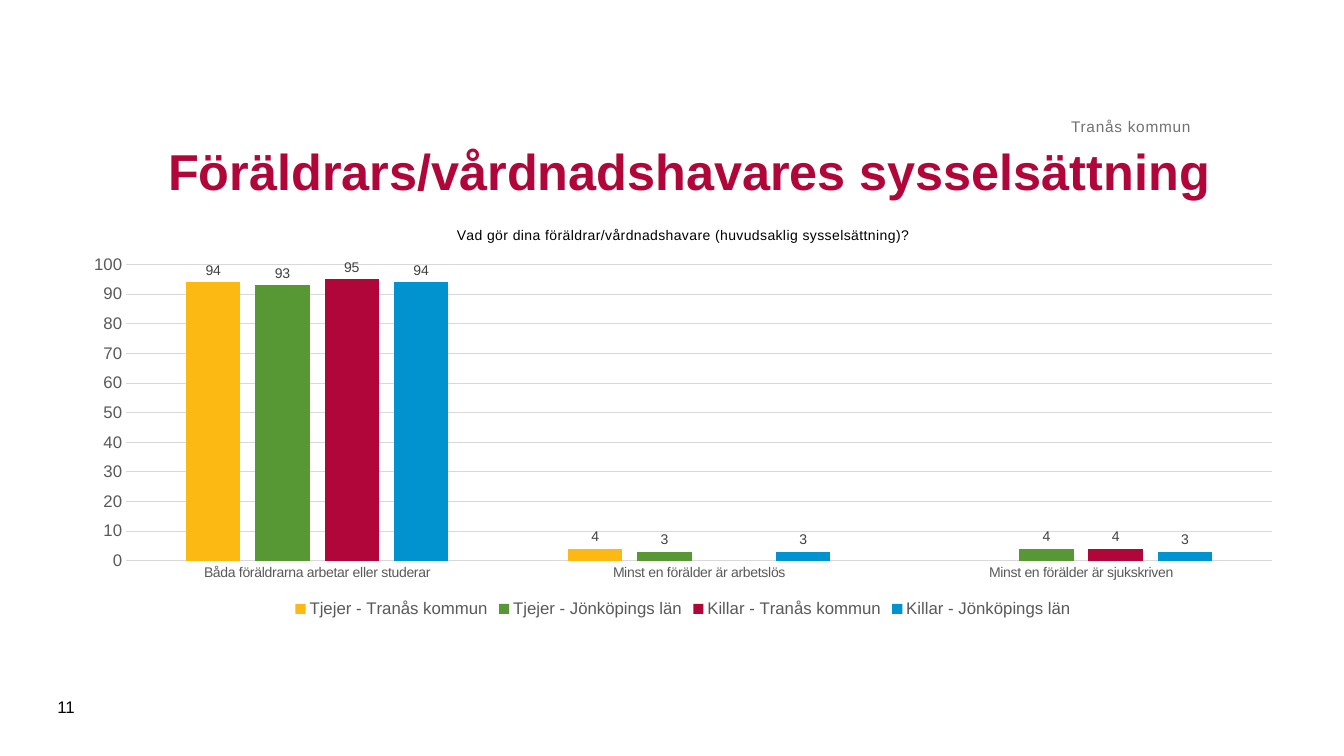
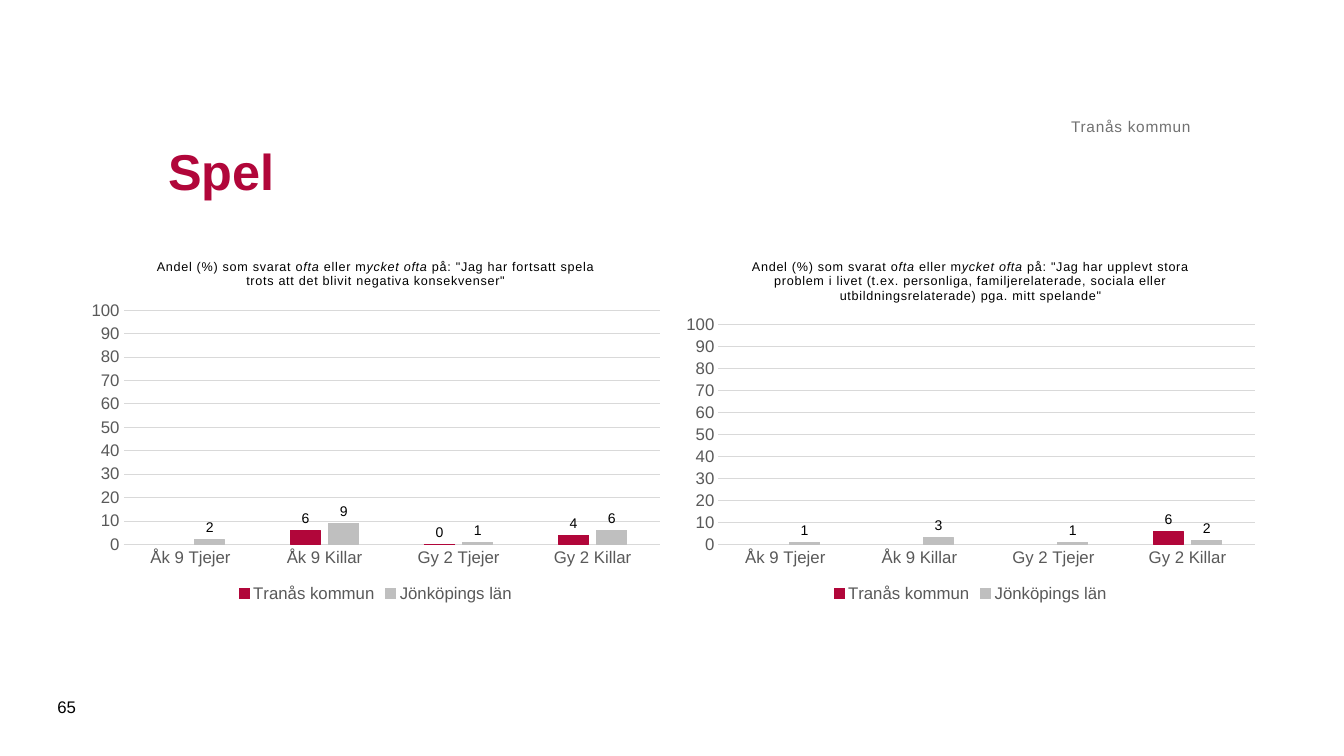
from pptx import Presentation
from pptx import util as u
from pptx.chart import data as chart_data
from pptx.dml import color
from pptx.enum import chart as charts, text

COLORS = {
    "crimson": "B1063A",
    "yellow": "FDB913",
    "green": "579835",
    "blue": "0093D0",
    "silver": "BFBFBF",
    "grid": "D9D9D9",
    "axis": "595959",
    "label": "404040",
    "muted": "717171",
    "black": "000000",
}
FONT = "Arial"
WHOLE_NUMBER = "#,##0;#,##0"


class Deck:
    def __init__(self):
        self.presentation = Presentation()
        self.presentation.slide_width = u.Inches(13.33)
        self.presentation.slide_height = u.Inches(7.5)
        self.slide = None

    def rgb(self, name):
        return color.RGBColor.from_string(COLORS[name])

    def style(self, font, size, color_name, bold=False, italic=False):
        font.name = FONT
        font.size = u.Pt(size)
        font.bold = bold
        font.italic = italic
        font.color.rgb = self.rgb(color_name)

    def track(self, font, points):
        font._element.set("spc", str(round(points * 100)))

    def line(self, line_format, color_name):
        line_format.color.rgb = self.rgb(color_name)
        line_format.width = u.Pt(0.75)

    def text_box(self, box, content, size, color_name, anchor=text.MSO_ANCHOR.MIDDLE,
                 align=text.PP_ALIGN.LEFT, bold=False, spacing=0, inset=True):
        shape = self.slide.shapes.add_textbox(*map(u.Inches, box))
        frame = shape.text_frame
        frame.word_wrap = True
        frame.vertical_anchor = anchor
        if not inset:
            frame.margin_left = frame.margin_right = 0
            frame.margin_top = frame.margin_bottom = 0
        paragraph = frame.paragraphs[0]
        paragraph.alignment = align
        run = paragraph.add_run()
        run.text = content
        self.style(run.font, size, color_name, bold)
        if spacing:
            self.track(run.font, spacing)

    def new_slide(self, title, number, title_width=10.24):
        self.slide = self.presentation.slides.add_slide(self.presentation.slide_layouts[6])
        self.text_box((1.57, 0.98, title_width, 1.42), title, 36, "crimson", bold=True)
        self.text_box((1.57, 0.62, 10.24, 0.73), "Tranås kommun", 11, "muted",
                      anchor=text.MSO_ANCHOR.BOTTOM, align=text.PP_ALIGN.RIGHT,
                      spacing=0.5, inset=False)
        self.text_box((0.47, 6.81, 0.57, 0.4), number, 12, "black")

    def chart_title(self, chart, runs, size, spacing):
        chart.has_title = True
        chart.chart_title.include_in_layout = False
        paragraph = chart.chart_title.text_frame.paragraphs[0]
        for content, italic in runs:
            run = paragraph.add_run()
            run.text = content
            self.style(run.font, size, "black", italic=italic)
            self.track(run.font, spacing)

    def axes(self, chart, category_size, category_spacing):
        category_axis, value_axis = chart.category_axis, chart.value_axis
        for axis, size in ((category_axis, category_size), (value_axis, 12)):
            axis.major_tick_mark = axis.minor_tick_mark = charts.XL_TICK_MARK.NONE
            self.style(axis.tick_labels.font, size, "axis")
        if category_spacing:
            self.track(category_axis.tick_labels.font, category_spacing)
        self.line(category_axis.format.line, "grid")
        value_axis.minimum_scale = 0
        value_axis.maximum_scale = 100
        value_axis.major_unit = 10
        value_axis.tick_labels.number_format = WHOLE_NUMBER
        value_axis.tick_labels.number_format_is_linked = False
        value_axis.format.line.fill.background()
        value_axis.has_major_gridlines = True
        self.line(value_axis.major_gridlines.format.line, "grid")

    def column_chart(self, box, title_runs, categories, series_rows, title_size=9,
                     title_spacing=0.5, category_size=12, category_spacing=0,
                     label_color="black", outlined=True):
        data = chart_data.CategoryChartData(number_format=WHOLE_NUMBER)
        data.categories = categories
        for name, _, values in series_rows:
            data.add_series(name, values)
        chart = self.slide.shapes.add_chart(
            charts.XL_CHART_TYPE.COLUMN_CLUSTERED, *map(u.Inches, box), data).chart
        self.style(chart.font, 10, "black")
        self.chart_title(chart, title_runs, title_size, title_spacing)
        self.axes(chart, category_size, category_spacing)

        chart.has_legend = True
        chart.legend.position = charts.XL_LEGEND_POSITION.BOTTOM
        chart.legend.include_in_layout = False
        self.style(chart.legend.font, 12, "axis")

        plot = chart.plots[0]
        plot.vary_by_categories = False
        plot.gap_width = 219
        plot.overlap = -27
        for series, (_, color_name, _) in zip(plot.series, series_rows):
            series.invert_if_negative = False
            series.format.fill.solid()
            series.format.fill.fore_color.rgb = self.rgb(color_name)
            if outlined:
                self.line(series.format.line, color_name)
            else:
                series.format.line.fill.background()
            labels = series.data_labels
            labels.show_value = True
            labels.position = charts.XL_LABEL_POSITION.OUTSIDE_END
            labels.number_format = WHOLE_NUMBER
            labels.number_format_is_linked = False
            self.style(labels.font, 10, label_color)


def occupation_slide(deck):
    deck.new_slide("Föräldrars/vårdnadshavares sysselsättning", "11", title_width=10.91)
    deck.column_chart(
        (0.69, 2.08, 12.17, 4.09),
        [("Vad gör dina föräldrar/vårdnadshavare (huvudsaklig sysselsättning)?", False)],
        ["Båda föräldrarna arbetar eller studerar",
         "Minst en förälder är arbetslös",
         "Minst en förälder är sjukskriven"],
        [("Tjejer - Tranås kommun", "yellow", (94, 4, None)),
         ("Tjejer - Jönköpings län", "green", (93, 3, 4)),
         ("Killar - Tranås kommun", "crimson", (95, None, 4)),
         ("Killar - Jönköpings län", "blue", (94, 3, 3))],
        title_size=10, title_spacing=0.4, category_size=10, category_spacing=-0.1,
        label_color="label", outlined=False)


def gaming_slide(deck):
    deck.new_slide("Spel", "65")
    question = [("Andel (%) som svarat o", False), ("fta", True),
                (" eller m", False), ("ycket ofta", True)]
    panels = [
        (0.79, ' på: "Jag har fortsatt spela trots att det blivit negativa konsekvenser"',
         (None, 6, 0, 4), (2, 9, 1, 6)),
        (6.69, ' på: "Jag har upplevt stora problem i livet (t.ex. personliga, '
               'familjerelaterade, sociala eller utbildningsrelaterade) pga. mitt spelande"',
         (None, None, None, 6), (1, 3, 1, 2)),
    ]
    for left, statement, municipality, county in panels:
        deck.column_chart(
            (left, 2.4, 5.87, 3.62),
            question + [(statement, False)],
            ["Åk 9 Tjejer", "Åk 9 Killar", "Gy 2 Tjejer", "Gy 2 Killar"],
            [("Tranås kommun", "crimson", municipality),
             ("Jönköpings län", "silver", county)])


def main():
    deck = Deck()
    occupation_slide(deck)
    gaming_slide(deck)
    deck.presentation.save("out.pptx")


if __name__ == "__main__":
    main()
